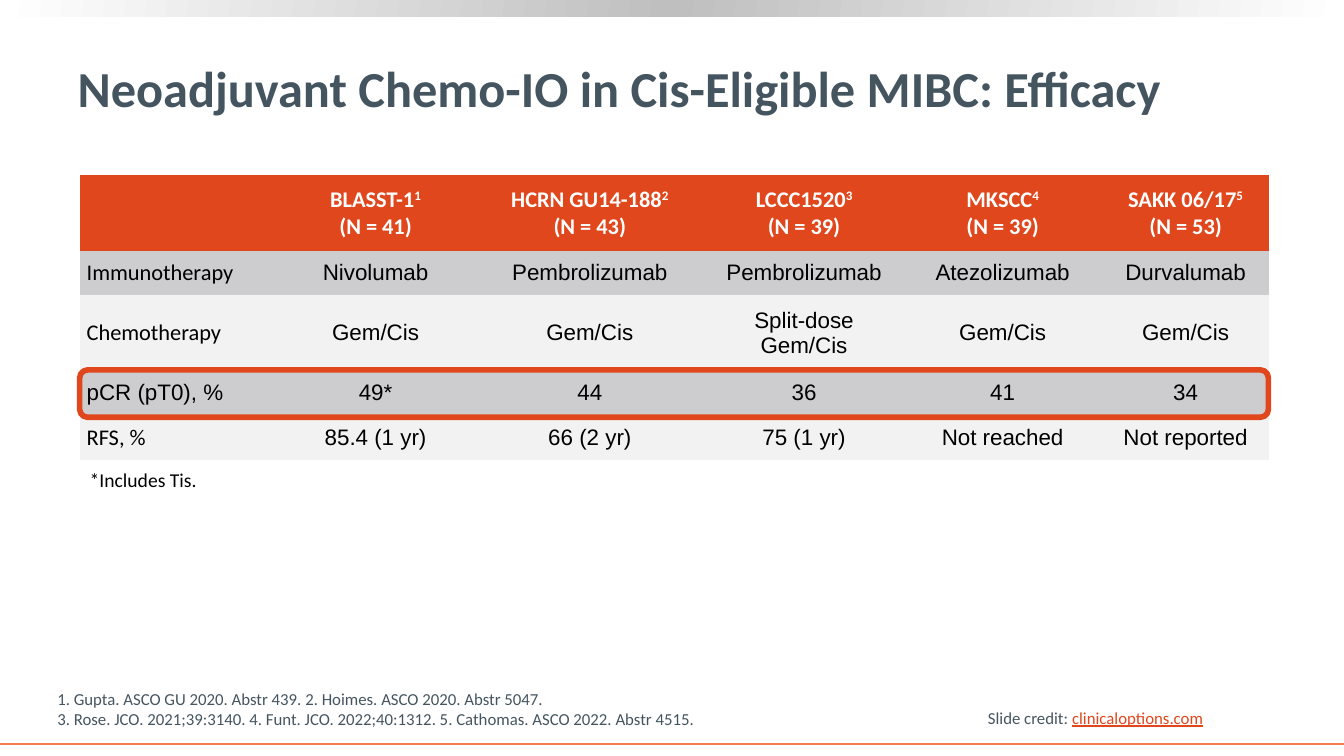
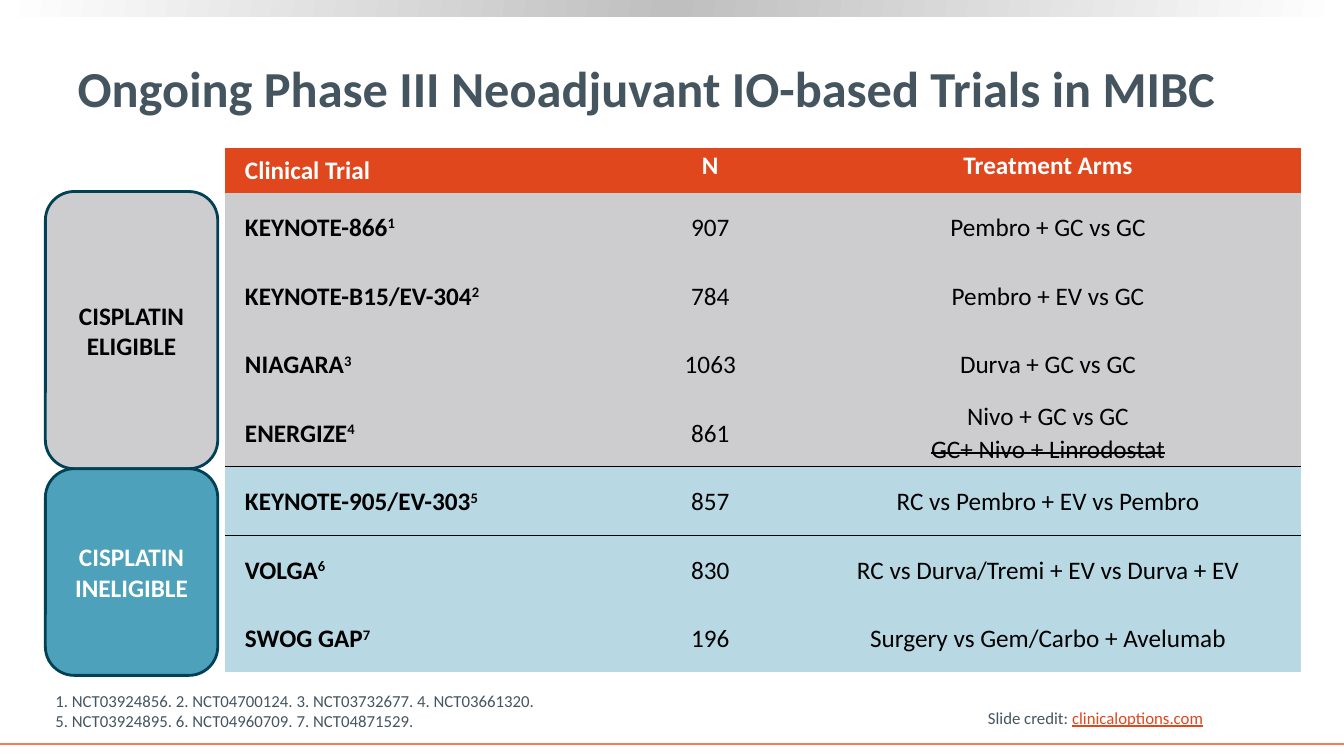
from copy import deepcopy
from lxml import etree
from pptx import Presentation
from pptx.dml.color import RGBColor
from pptx.enum import shapes, text
from pptx.oxml.ns import qn
from pptx.util import Inches, Pt

COLORS = {
    "slate": "455560", "orange": "E1471D", "coral": "F47D55", "white": "FFFFFF",
    "black": "000000", "silver": "BFBFBF", "gray": "CDCDCF", "pale": "F2F2F2",
    "sky": "B8D9E4", "teal": "4DA1BB", "navy": "014155",
}
COLORS = {name: RGBColor.from_string(value) for name, value in COLORS.items()}
PLAIN_TABLE = "{2D5ABB26-0587-4C30-8999-92F81FD0307C}"
LEFT, CENTER = text.PP_ALIGN.LEFT, text.PP_ALIGN.CENTER
TOP, MIDDLE = text.MSO_ANCHOR.TOP, text.MSO_ANCHOR.MIDDLE


def write(frame, content, size, color, bold=False, align=LEFT, face="Calibri", spacing=None):
    for number, line in enumerate(content.split("\n")):
        paragraph = frame.add_paragraph() if number else frame.paragraphs[0]
        paragraph.alignment = align
        if spacing:
            paragraph.line_spacing = spacing
        font = paragraph.font
        font.size, font.bold, font.name = Pt(size), bold, face
        font.color.rgb = COLORS[color]
        for position, part in enumerate(line.split("^")):
            run = paragraph.add_run()
            run.text = part
            if position:
                run._r.get_or_add_rPr().set("baseline", "30000")


def add_grid(slide, left, top, widths, heights):
    frame = slide.shapes.add_table(len(heights), len(widths), Inches(left), Inches(top),
                                   Inches(sum(widths)), Inches(sum(heights)))
    next(frame.element.iter(qn("a:tableStyleId"))).text = PLAIN_TABLE
    grid = frame.table
    grid.first_row = grid.horz_banding = False
    for column, width in zip(grid.columns, widths):
        column.width = Inches(width)
    for row, height in zip(grid.rows, heights):
        row.height = Inches(height)
    return grid


prs = Presentation()
prs.slide_width, prs.slide_height = Inches(13.33), Inches(7.5)
layout = prs.slide_layouts[5]
heading = layout.placeholders[0]
heading.left, heading.top = Inches(0.67), Inches(0.26)
heading.width, heading.height = Inches(12.18), Inches(1.21)

pages = [
    ("Neoadjuvant Chemo-IO in Cis-Eligible MIBC: Efficacy", 0.47, 6.78,
     "1. Gupta. ASCO GU 2020. Abstr 439. 2. Hoimes. ASCO 2020. Abstr 5047.\n"
     "3. Rose. JCO. 2021;39:3140. 4. Funt. JCO. 2022;40:1312. 5. Cathomas. ASCO 2022. Abstr 4515."),
    ("Ongoing Phase III Neoadjuvant IO-based Trials in MIBC", 0.45, 6.8,
     "1. NCT03924856. 2. NCT04700124. 3. NCT03732677. 4. NCT03661320.\n"
     "5. NCT03924895. 6. NCT04960709. 7. NCT04871529."),
]
for title, left, top, references in pages:
    slide = prs.slides.add_slide(layout)
    title_frame = slide.shapes.title.text_frame
    title_frame.auto_size = text.MSO_AUTO_SIZE.NONE
    title_frame.vertical_anchor = MIDDLE
    write(title_frame, title, 36, "slate", bold=True)
    sources = slide.shapes.add_textbox(Inches(left), Inches(top), Inches(8.6), Inches(0.5))
    sources.text_frame.word_wrap = True
    write(sources.text_frame, references, 12, "slate")
efficacy, ongoing = prs.slides

band = efficacy.shapes.add_shape(shapes.MSO_SHAPE.RECTANGLE, 0, 0, prs.slide_width, Inches(0.16))
band.shadow.inherit = False
band.line.fill.background()
band.fill.gradient()
band.fill.gradient_angle = 170
stop_list = next(band.element.iter(qn("a:gsLst")))
stop_list.append(deepcopy(stop_list[0]))
for stop, (position, color) in zip(band.fill.gradient_stops,
                                   [(0, "white"), (0.5, "silver"), (1, "white")]):
    stop.position = position
    stop.color.rgb = COLORS[color]

rule = efficacy.shapes.add_connector(shapes.MSO_CONNECTOR.STRAIGHT, 0, Inches(7.38),
                                     prs.slide_width, Inches(7.38))
rule.line.color.rgb = COLORS["coral"]
rule.line.width = Pt(1.5)
etree.SubElement(rule.element.spPr, qn("a:effectLst"))

credit = efficacy.shapes.add_textbox(Inches(9.7), Inches(6.97), Inches(2.36), Inches(0.3))
credit.text_frame.word_wrap = False
write(credit.text_frame, "Slide credit: ", 12, "slate")
site = credit.text_frame.paragraphs[0].add_run()
site.text = "clinicaloptions.com"
site.font.underline = True
site.font.color.rgb = COLORS["orange"]

for number, shared in enumerate([band, rule, credit], 101):
    next(shared.element.iter(qn("p:cNvPr"))).set("id", str(number))
    prs.slide_master.shapes.element.append(shared.element)

results = [
    ["", "BLASST-1^1\n(N = 41)", "HCRN GU14-188^2\n(N = 43)", "LCCC1520^3\n(N = 39)",
     "MKSCC^4\n(N = 39)", "SAKK 06/17^5\n(N = 53)"],
    ["Immunotherapy", "Nivolumab", "Pembrolizumab", "Pembrolizumab", "Atezolizumab", "Durvalumab"],
    ["Chemotherapy", "Gem/Cis", "Gem/Cis", "Split-dose\nGem/Cis", "Gem/Cis", "Gem/Cis"],
    ["pCR (pT0), %", "49*", "44", "36", "41", "34"],
    ["RFS, %", "85.4 (1 yr)", "66 (2 yr)", "75 (1 yr)", "Not reached", "Not reported"],
]
results_grid = add_grid(efficacy, 0.79, 1.74, [1.95, 1.97, 2.28, 1.97, 1.97, 1.66],
                        [0.75, 0.44, 0.75, 0.44, 0.44])
for r, values in enumerate(results):
    for c, value in enumerate(values):
        cell = results_grid.cell(r, c)
        cell.fill.solid()
        cell.fill.fore_color.rgb = COLORS["orange" if r == 0 else "gray" if r % 2 else "pale"]
        cell.vertical_anchor = MIDDLE
        if c == 0:
            cell.margin_left = Inches(0.07)
        calibri = r == 0 or (c == 0 and not value.startswith("pCR"))
        write(cell.text_frame, value, 16, "black" if r else "white", bold=r == 0,
              align=CENTER if c else LEFT, face="Calibri" if calibri else "Arial")

pcr_frame = efficacy.shapes.add_shape(shapes.MSO_SHAPE.ROUNDED_RECTANGLE, Inches(0.79), Inches(3.67),
                                      Inches(11.79), Inches(0.47))
pcr_frame.shadow.inherit = False
pcr_frame.fill.background()
pcr_frame.line.color.rgb = COLORS["orange"]
pcr_frame.line.width = Pt(4)

footnote = efficacy.shapes.add_textbox(Inches(0.79), Inches(4.59), Inches(1.32), Inches(0.34))
footnote.text_frame.word_wrap = False
write(footnote.text_frame, "*Includes Tis.", 14, "black")

trials = [
    ["Clinical Trial", "N", "Treatment Arms"],
    ["KEYNOTE-866^1", "907", "Pembro + GC vs GC"],
    ["KEYNOTE-B15/EV-304^2", "784", "Pembro + EV vs GC"],
    ["NIAGARA^3", "1063", "Durva + GC vs GC"],
    ["ENERGIZE^4", "861", "Nivo + GC vs GC\nGC+ Nivo + Linrodostat"],
    ["KEYNOTE-905/EV-303^5", "857", "RC vs Pembro + EV vs Pembro"],
    ["VOLGA^6", "830", "RC vs Durva/Tremi + EV vs Durva + EV"],
    ["SWOG GAP^7", "196", "Surgery vs Gem/Carbo + Avelumab"],
]
last_eligible = 4
trials_grid = add_grid(ongoing, 2.23, 1.47, [3.97, 1.69, 5.01], [0.44] + [0.68] * 7)
for r, values in enumerate(trials):
    for c, value in enumerate(values):
        cell = trials_grid.cell(r, c)
        cell.fill.solid()
        cell.fill.fore_color.rgb = COLORS["orange" if r == 0 else "gray" if r <= last_eligible else "sky"]
        cell.vertical_anchor = MIDDLE if r else TOP
        cell.margin_left = Inches(0.05 if c else 0.2)
        cell.margin_right = Inches(0.05 if c else 0.1)
        cell.margin_top = cell.margin_bottom = Inches(0 if c else 0.05)
        write(cell.text_frame, value, 18, "black" if r else "white", bold=r == 0 or c == 0,
              align=CENTER if c else LEFT, spacing=1.07)
        if r in (last_eligible, last_eligible + 1):
            edge = etree.Element(qn("a:lnB" if r == last_eligible else "a:lnT"), w=str(Pt(1)))
            ink = etree.SubElement(etree.SubElement(edge, qn("a:solidFill")), qn("a:srgbClr"))
            ink.set("val", str(COLORS["black"]))
            cell._tc.get_or_add_tcPr().insert(0, edge)
dropped_arm = trials_grid.cell(last_eligible, 2).text_frame.paragraphs[1].runs[0]
dropped_arm._r.get_or_add_rPr().set("strike", "sngStrike")

for label, top, height, fill, ink in [
    ("CISPLATIN ELIGIBLE", 1.9, 2.75, "gray", "black"),
    ("CISPLATIN INELIGIBLE", 4.65, 2.05, "teal", "white"),
]:
    group = ongoing.shapes.add_shape(shapes.MSO_SHAPE.ROUNDED_RECTANGLE, Inches(0.45), Inches(top),
                                     Inches(1.71), Inches(height))
    group.shadow.inherit = False
    group.fill.solid()
    group.fill.fore_color.rgb = COLORS[fill]
    group.line.color.rgb = COLORS["navy"]
    group.line.width = Pt(2)
    group.text_frame.vertical_anchor = MIDDLE
    write(group.text_frame, label, 18, ink, bold=True, align=CENTER)

prs.save("out.pptx")
